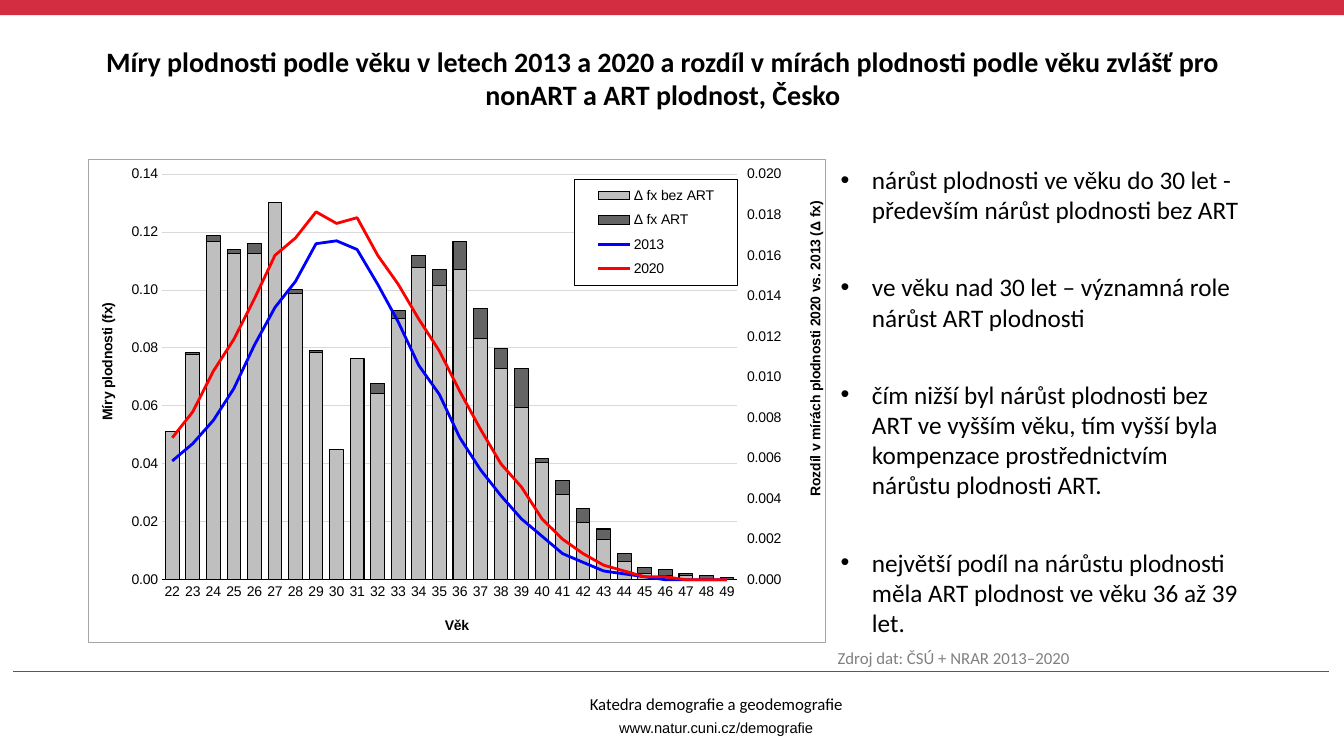
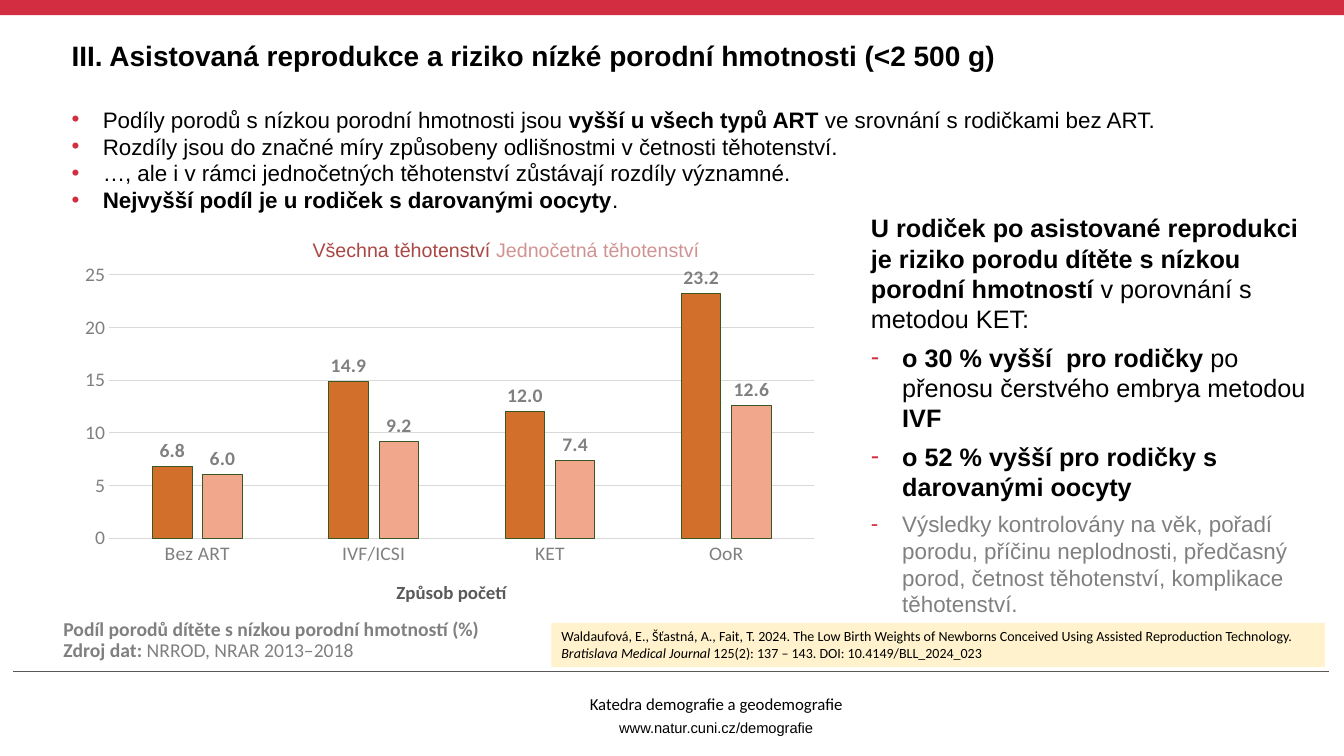
import copy

import lxml.etree
import pptx
import pptx.chart.axis
import pptx.chart.data
import pptx.dml.color
import pptx.enum.chart
import pptx.enum.shapes
import pptx.enum.text
import pptx.oxml
import pptx.oxml.ns
import pptx.util

Inches = pptx.util.Inches
Pt = pptx.util.Pt
qn = pptx.oxml.ns.qn
ChartType = pptx.enum.chart.XL_CHART_TYPE
TickMark = pptx.enum.chart.XL_TICK_MARK

COLOURS = {
    "accent": "D22D40", "text": "000000", "muted": "808080", "rule": "595959",
    "grid": "D9D9D9", "frame": "A6A6A6", "paper": "FFFFFF", "citation": "FFF2CC",
    "without_art": "BFBFBF", "with_art": "646464", "year_2013": "0000FF", "year_2020": "FF0000",
    "all": "D26F2B", "single": "F1A78B", "outline": "385723",
    "all_key": "AA4643", "single_key": "D19392",
}
FOOTER = [
    dict(runs=[("Katedra demografie a geodemografie", "")]),
    dict(runs=[("www.natur.cuni.cz/demografie", "")], size=10.5, font="Arial"),
]

FERTILITY_TITLE = ("Míry plodnosti podle věku v letech 2013 a 2020 a rozdíl v mírách plodnosti "
                   "podle věku zvlášť pro nonART a ART plodnost, Česko")
FERTILITY_POINTS = [
    "nárůst plodnosti ve věku do 30 let - především nárůst plodnosti bez ART",
    "ve věku nad 30 let – významná role nárůst ART plodnosti",
    "čím nižší byl nárůst plodnosti bez ART ve vyšším věku, tím vyšší byla kompenzace "
    "prostřednictvím nárůstu plodnosti ART.",
    "největší podíl na nárůstu plodnosti měla ART plodnost ve věku 36 až 39 let.",
]
FERTILITY_SOURCE = "Zdroj dat: ČSÚ + NRAR 2013–2020"
AGES = [str(age) for age in range(22, 50)]
FERTILITY_SERIES = [
    ("Δ fx bez ART", "without_art",
     [0.0073, 0.0111, 0.0167, 0.0161, 0.0161, 0.0186, 0.0141, 0.0112, 0.0064, 0.0109,
      0.0092, 0.0129, 0.0154, 0.0145, 0.0153, 0.0119, 0.0104, 0.0085, 0.0058, 0.0042,
      0.0028, 0.002, 0.0009, 0.0003, 0.0002, 0.0002, 0, 0]),
    ("Δ fx ART", "with_art",
     [0, 0.0001, 0.0003, 0.0002, 0.0005, 0, 0.0002, 0.0001, 0, 0, 0.0005, 0.0004, 0.0006,
      0.0008, 0.0014, 0.0015, 0.001, 0.0019, 0.0002, 0.0007, 0.0007, 0.0005, 0.0004,
      0.0003, 0.0003, 0.0001, 0.0002, 0.0001]),
    ("2013", "year_2013",
     [0.041, 0.047, 0.055, 0.066, 0.081, 0.094, 0.103, 0.116, 0.117, 0.114, 0.102, 0.089,
      0.074, 0.064, 0.049, 0.038, 0.029, 0.021, 0.015, 0.009, 0.006, 0.003, 0.002, 0.001,
      0, 0, 0, 0]),
    ("2020", "year_2020",
     [0.049, 0.058, 0.072, 0.083, 0.097, 0.112, 0.118, 0.127, 0.123, 0.125, 0.112, 0.102,
      0.09, 0.079, 0.065, 0.052, 0.04, 0.032, 0.021, 0.014, 0.009, 0.005, 0.003, 0.001,
      0.001, 0, 0, 0]),
]

WEIGHT_TITLE = "III. Asistovaná reprodukce a riziko nízké porodní hmotnosti (<2 500 g)"
WEIGHT_POINTS = [
    [("Podíly porodů s nízkou porodní hmotnosti jsou ", ""), ("vyšší u všech typů ART ", "b"),
     ("ve srovnání s rodičkami bez ART.", "")],
    [("Rozdíly jsou do značné míry způsobeny odlišnostmi v četnosti těhotenství.", "")],
    [("…, ale i v rámci jednočetných těhotenství zůstávají rozdíly významné.", "")],
    [("Nejvyšší podíl je u rodiček s darovanými oocyty", "b"), (".", "")],
]
WEIGHT_FINDINGS = [
    dict(runs=[("U rodiček po asistované reprodukci je riziko porodu dítěte s nízkou porodní "
                "hmotností ", "b"), ("v porovnání s metodou KET:", "")]),
    dict(bullet="-", runs=[("o 30 % vyšší  pro rodičky ", "b"),
                           ("po přenosu čerstvého embrya metodou ", ""), ("IVF", "b")]),
    dict(bullet="-", runs=[("o 52 % vyšší pro rodičky s darovanými oocyty", "b")]),
    dict(bullet="-", size=16, colour="muted",
         runs=[("Výsledky kontrolovány na věk, pořadí porodu, příčinu neplodnosti, předčasný "
                "porod, četnost těhotenství, komplikace těhotenství.", "")]),
]
WEIGHT_KEY = [("Všechna těhotenství ", "", "all_key"), ("Jednočetná těhotenství", "", "single_key")]
WEIGHT_SOURCE = [
    dict(runs=[("Podíl porodů dítěte s nízkou porodní hmotností (%)", "b")]),
    dict(runs=[("Zdroj dat: ", "b"), ("NRROD, NRAR 2013–2018", "")]),
]
CITATION = [
    ("Waldaufová, E., Šťastná, A., Fait, T. 2024. The Low Birth Weights of Newborns Conceived "
     "Using Assisted Reproduction Technology. ", ""),
    ("Bratislava Medical Journal", "i"), (" 125(2): 137 – 143. DOI: 10.4149/BLL_2024_023", ""),
]
CONCEPTIONS = ["Bez ART", "IVF/ICSI", "KET", "OoR"]
WEIGHT_SERIES = [("Series 1", "all", [6.8, 14.9, 12, 23.2]),
                 ("Series 2", "single", [6, 9.2, 7.4, 12.6])]


def rgb(name):
    return pptx.dml.color.RGBColor.from_string(COLOURS[name])


def set_font(font, size, name, colour, bold=None):
    font.size, font.name, font.bold = Pt(size), name, bold
    font.color.rgb = rgb(colour)


def set_line(line, colour, width=0.75):
    line.color.rgb = rgb(colour)
    line.width = Pt(width)


def add_bullet(paragraph, character, colour):
    properties = paragraph._p.get_or_add_pPr()
    properties.set("marL", str(Inches(0.31)))
    properties.set("indent", str(-Inches(0.31)))
    bullet_colour = lxml.etree.SubElement(properties, qn("a:buClr"))
    lxml.etree.SubElement(bullet_colour, qn("a:srgbClr"), val=COLOURS[colour])
    lxml.etree.SubElement(properties, qn("a:buFont"), typeface="Arial")
    lxml.etree.SubElement(properties, qn("a:buChar"), char=character)


def fill_text(frame, paragraphs, size, font, colour="text", bullet_colour="accent",
              centred=False, spacing=None, after=0, inset=True):
    frame.word_wrap = True
    frame.vertical_anchor = pptx.enum.text.MSO_ANCHOR.TOP
    if not inset:
        frame.margin_left = frame.margin_right = frame.margin_top = frame.margin_bottom = 0
    align = pptx.enum.text.PP_ALIGN
    for index, item in enumerate(paragraphs):
        paragraph = frame.add_paragraph() if index else frame.paragraphs[0]
        if "bullet" in item:
            add_bullet(paragraph, item["bullet"], bullet_colour)
        paragraph.alignment = align.CENTER if centred else align.LEFT
        paragraph.line_spacing = spacing
        paragraph.space_after = Pt(after)
        styles = {style for _, style, *_ in item["runs"]}
        set_font(paragraph.font, item.get("size", size), item.get("font", font),
                 item.get("colour", colour), True if styles == {"b"} else None)
        for text, style, *run_colour in item["runs"]:
            run = paragraph.add_run()
            run.text = text
            if len(styles) > 1:
                run.font.bold, run.font.italic = style == "b", style == "i"
            if run_colour:
                run.font.color.rgb = rgb(run_colour[0])


def add_text(slide, box, paragraphs, size, font, **options):
    shape = slide.shapes.add_textbox(*map(Inches, box))
    fill_text(shape.text_frame, paragraphs, size, font, **options)


def add_rectangle(slide, box, colour):
    shape = slide.shapes.add_shape(pptx.enum.shapes.MSO_SHAPE.RECTANGLE, *map(Inches, box))
    shape.shadow.inherit = False
    shape.fill.solid()
    shape.fill.fore_color.rgb = rgb(colour)
    shape.line.fill.background()
    return shape


def add_base_slide(presentation):
    slide = presentation.slides.add_slide(presentation.slide_layouts[6])
    add_rectangle(slide, (0, 0, 13.33, 0.15), "accent")
    rule = slide.shapes.add_connector(pptx.enum.shapes.MSO_CONNECTOR.STRAIGHT,
                                      *map(Inches, (0.13, 6.66, 13.18, 6.66)))
    set_line(rule.line, "rule")
    lxml.etree.SubElement(rule._element.spPr, qn("a:effectLst"))
    add_text(slide, (5.23, 6.82, 3.75, 0.68), FOOTER, 12, "Calibri",
             centred=True, spacing=1.3, inset=False)
    return slide


def set_layout(element, x, y, width=None, height=None, inner=False):
    for old in element.findall(qn("c:layout")):
        element.remove(old)
    layout = element.makeelement(qn("c:layout"))
    overlay = element.find(qn("c:overlay"))
    if overlay is None:
        element.insert(0, layout)
    else:
        overlay.addprevious(layout)
    manual = lxml.etree.SubElement(layout, qn("c:manualLayout"))
    values = [("layoutTarget", "inner")] if inner else []
    values += [("xMode", "edge"), ("yMode", "edge"), ("x", x), ("y", y)]
    values += [("w", width), ("h", height)] if width else []
    for tag, value in values:
        lxml.etree.SubElement(manual, qn("c:" + tag), val=str(value))


def frame_properties(line_colour):
    namespace = pptx.oxml.ns.nsdecls("c", "a")
    fill = '<a:solidFill><a:srgbClr val="%s"/></a:solidFill>'
    return pptx.oxml.parse_xml(
        f'<c:spPr {namespace}>{fill % COLOURS["paper"]}'
        f'<a:ln w="9525">{fill % COLOURS[line_colour]}</a:ln></c:spPr>')


def add_chart(slide, kind, box, categories, series, plot_box, font, gap, overlap, outline):
    data = pptx.chart.data.CategoryChartData()
    data.categories = categories
    for name, _, values in series:
        data.add_series(name, values)
    chart = slide.shapes.add_chart(kind, *map(Inches, box), data).chart
    chart.has_title = chart.has_legend = False
    set_font(chart.font, 10, font, "text")
    plot = chart.plots[0]
    plot.gap_width, plot.overlap, plot.vary_by_categories = gap, overlap, False
    for item, (_, colour, _) in zip(plot.series, series):
        item.format.fill.solid()
        item.format.fill.fore_color.rgb = rgb(colour)
        set_line(item.format.line, outline)
    set_layout(chart._chartSpace.chart.plotArea, *plot_box, inner=True)
    return chart


def style_axis(axis, size, font, colour, line=None, tick=TickMark.NONE, grid=False, scale=None):
    axis.major_tick_mark, axis.minor_tick_mark = tick, TickMark.NONE
    set_font(axis.tick_labels.font, size, font, colour)
    if line:
        set_line(axis.format.line, line)
    else:
        axis.format.line.fill.background()
    axis.has_major_gridlines = grid
    if grid:
        set_line(axis.major_gridlines.format.line, "grid")
    if scale:
        axis.minimum_scale = 0
        axis.maximum_scale, axis.major_unit, number_format = scale
        axis.tick_labels.number_format = number_format
        axis.tick_labels.number_format_is_linked = False


def title_axis(axis, text, x, y, size, font, colour="text"):
    paragraph = axis.axis_title.text_frame.paragraphs[0]
    paragraph.text = text
    set_font(paragraph.font, size, font, colour, True)
    set_layout(axis.axis_title._element, x, y)


def split_off_lines(chart, first_line):
    plot_area = chart._chartSpace.chart.plotArea
    bars = plot_area.find(qn("c:barChart"))
    lines = plot_area.makeelement(qn("c:lineChart"))
    bars.addnext(lines)
    lxml.etree.SubElement(lines, qn("c:grouping"), val="standard")
    lxml.etree.SubElement(lines, qn("c:varyColors"), val="0")
    for series in bars.findall(qn("c:ser"))[first_line:]:
        for tag in ("c:invertIfNegative", "c:spPr"):
            for child in series.findall(qn(tag)):
                series.remove(child)
        lines.append(series)
    lxml.etree.SubElement(lines, qn("c:marker"), val="1")
    left_axis = plot_area.find(qn("c:valAx"))
    right_axis = copy.deepcopy(left_axis)
    hidden_axis = copy.deepcopy(plot_area.find(qn("c:catAx")))
    left_axis.addnext(right_axis)
    right_axis.addnext(hidden_axis)
    for reference in bars.findall(qn("c:axId")):
        lines.append(copy.deepcopy(reference))
    references = bars.findall(qn("c:axId"))
    pairs = ((hidden_axis, "5001", "5002"), (right_axis, "5002", "5001"))
    for reference, (axis, own, other) in zip(references, pairs):
        reference.set("val", own)
        axis.find(qn("c:axId")).set("val", own)
        axis.find(qn("c:crossAx")).set("val", other)
    hidden_axis.find(qn("c:delete")).set("val", "1")
    right_axis.find(qn("c:axPos")).set("val", "r")
    right_axis.find(qn("c:crosses")).set("val", "max")
    return pptx.chart.axis.ValueAxis(left_axis), pptx.chart.axis.ValueAxis(right_axis)


def build_fertility_slide(presentation):
    slide = add_base_slide(presentation)
    add_text(slide, (0.79, 0.44, 11.57, 0.88), [dict(runs=[(FERTILITY_TITLE, "b")])], 20,
             "Calibri", centred=True, inset=False)
    add_text(slide, (8.24, 1.58, 4.22, 4.85),
             [dict(bullet="•", runs=[(point, "")]) for point in FERTILITY_POINTS],
             18, "Calibri", bullet_colour="text", after=33.5)
    chart = add_chart(slide, ChartType.COLUMN_STACKED, (0.87, 1.58, 7.34, 4.8), AGES,
                      FERTILITY_SERIES, (0.1, 0.03, 0.78, 0.84), "Arial", 50, 100, "text")
    chart._chartSpace.chart.addnext(frame_properties("frame"))
    rate_axis, difference_axis = split_off_lines(chart, 2)
    for series, (_, colour, _) in zip(chart.plots[1].series, FERTILITY_SERIES[2:]):
        set_line(series.format.line, colour, 2)
        series.marker.style = pptx.enum.chart.XL_MARKER_STYLE.NONE
        series.smooth = False
    style_axis(chart.category_axis, 10, "Arial", "text", line="text")
    style_axis(rate_axis, 10, "Arial", "text", grid=True, scale=(0.14, 0.02, "0.00"))
    style_axis(difference_axis, 10, "Arial", "text", tick=TickMark.OUTSIDE,
               scale=(0.02, 0.002, "0.000"))
    title_axis(chart.category_axis, "Věk", 0.48, 0.94, 10, "Arial")
    title_axis(rate_axis, "Míry plodnosti (fx)", 0.01, 0.29, 10, "Arial")
    title_axis(difference_axis, "Rozdíl v mírách plodnosti 2020 vs. 2013 (Δ fx)",
               0.97, 0.08, 10, "Arial")
    chart.has_legend = True
    legend = chart.legend
    legend.position = pptx.enum.chart.XL_LEGEND_POSITION.BOTTOM
    legend.include_in_layout = False
    set_font(legend.font, 10, "Arial", "text")
    set_layout(legend._element, 0.66, 0.04, 0.22, 0.22)
    legend._element.find(qn("c:overlay")).addnext(frame_properties("text"))
    add_text(slide, (8.21, 6.38, 2.69, 0.3), [dict(runs=[(FERTILITY_SOURCE, "")])], 12,
             "Calibri", colour="muted")


def build_weight_slide(presentation):
    slide = add_base_slide(presentation)
    add_text(slide, (0.71, 0.28, 10.66, 0.54), [dict(runs=[(WEIGHT_TITLE, "b")])], 20, "Arial",
             spacing=1.3, inset=False)
    add_text(slide, (0.71, 1.05, 10.86, 1.08),
             [dict(bullet="•", runs=runs) for runs in WEIGHT_POINTS], 16, "Arial", inset=False)
    chart = add_chart(slide, ChartType.COLUMN_CLUSTERED, (0.28, 2.24, 8.04, 3.81), CONCEPTIONS,
                      WEIGHT_SERIES, (0.1, 0.13, 0.87, 0.7), "Calibri", 219, -27, "outline")
    style_axis(chart.category_axis, 14, "Calibri", "muted", line="grid")
    style_axis(chart.value_axis, 14, "Calibri", "muted", grid=True, scale=(25, 5, "#,##0"))
    title_axis(chart.category_axis, "Způsob početí", 0.45, 0.93, 13.5, "Calibri", "rule")
    plot = chart.plots[0]
    plot.has_data_labels = True
    labels = plot.data_labels
    labels.show_value = True
    labels.position = pptx.enum.chart.XL_LABEL_POSITION.OUTSIDE_END
    labels.number_format, labels.number_format_is_linked = "0.0", False
    set_font(labels.font, 14, "Calibri", "muted", True)
    add_text(slide, (0.53, 6.1, 8.99, 0.53), WEIGHT_SOURCE, 14, "Calibri", colour="muted",
             spacing=0.9)
    add_text(slide, (3.1, 2.36, 9.57, 0.24), [dict(runs=WEIGHT_KEY)], 14, "Arial", inset=False)
    add_text(slide, (8.54, 2.06, 4.61, 4.29), WEIGHT_FINDINGS, 18, "Arial", after=6)
    citation = add_rectangle(slide, (5.47, 6.18, 7.67, 0.44), "citation")
    fill_text(citation.text_frame, [dict(runs=CITATION)], 10, "Calibri")


def main():
    presentation = pptx.Presentation()
    presentation.slide_width, presentation.slide_height = Inches(13.33), Inches(7.5)
    build_fertility_slide(presentation)
    build_weight_slide(presentation)
    presentation.save("out.pptx")


if __name__ == "__main__":
    main()
